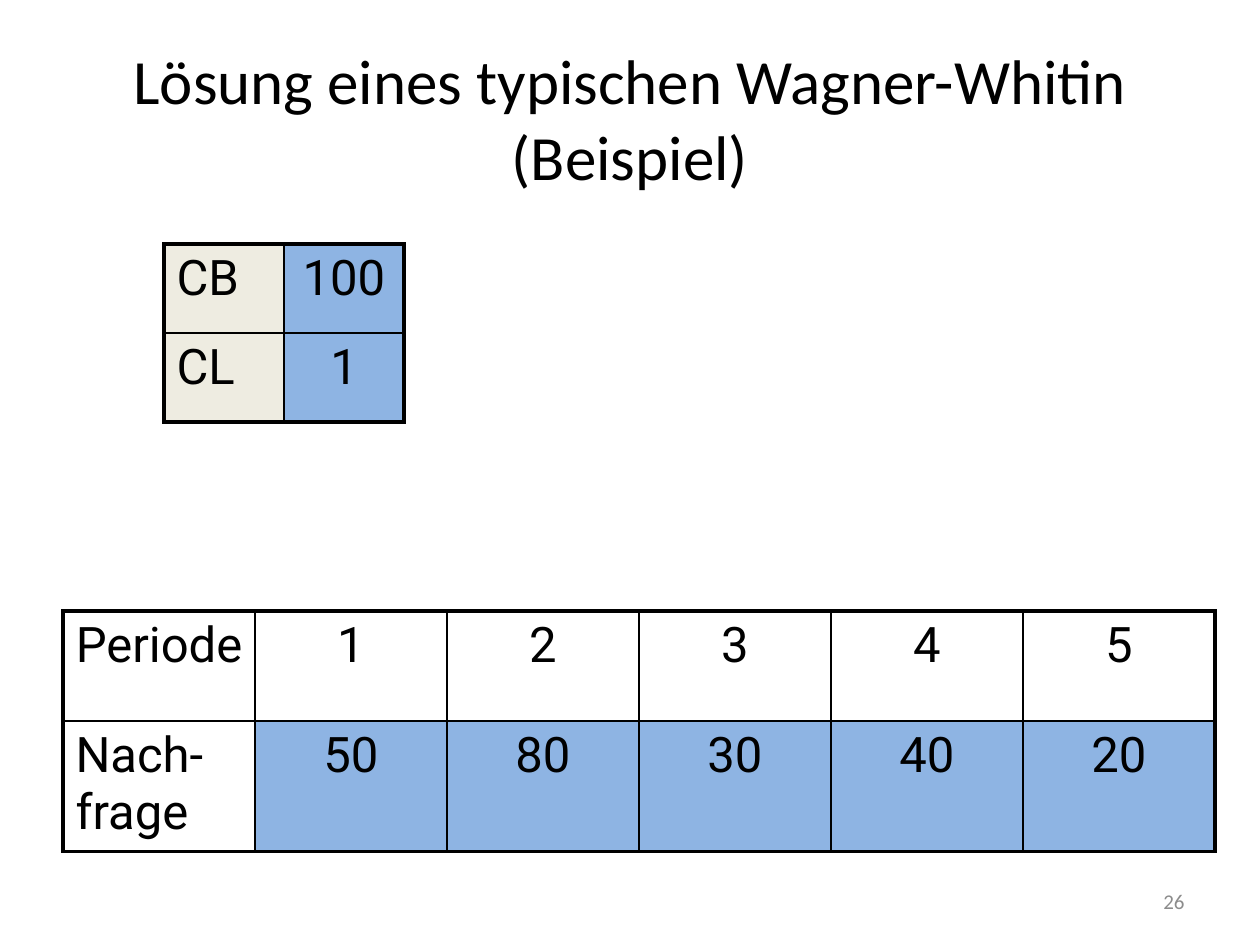
from lxml import etree
from pptx import Presentation
from pptx.dml.color import RGBColor
from pptx.enum.text import MSO_ANCHOR, PP_ALIGN
from pptx.oxml.ns import qn
from pptx.util import Pt

LEFT, CENTER, RIGHT = PP_ALIGN.LEFT, PP_ALIGN.CENTER, PP_ALIGN.RIGHT
MIDDLE = MSO_ANCHOR.MIDDLE
PX = 914400 // 126

# Content
TITLE = "Lösung eines typischen Wagner-Whitin (Beispiel)"
PAGE_NUMBER = "26"
DEMAND = [
    ["Periode", "1", "2", "3", "4", "5"],
    ["Nach-frage", "50", "80", "30", "40", "20"],
]
COSTS = [["CB", "100"], ["CL", "1"]]

# Colours and line widths
BLACK, GREY, WHITE = "000000", "8C8C8C", "FFFFFF"
BEIGE, BLUE = "EEECE1", "8EB4E3"
OUTER, INNER = Pt(2.25), Pt(1)


def rgb(value):
    return RGBColor.from_string(value)


def style(paragraph, font, size, color, align):
    paragraph.alignment = align
    for run in paragraph.runs:
        run.font.name = font
        run.font.size = Pt(size)
        run.font.color.rgb = rgb(color)


def add_label(slide, text, box, size, color, align):
    frame = slide.shapes.add_textbox(*(v * PX for v in box)).text_frame
    frame.word_wrap = True
    frame.vertical_anchor = MIDDLE
    frame.text = text
    style(frame.paragraphs[0], "Calibri", size, color, align)


def set_border(cell, side, width):
    line = etree.SubElement(cell._tc.get_or_add_tcPr(), qn(f"a:ln{side}"), w=str(width))
    fill = etree.SubElement(line, qn("a:solidFill"))
    etree.SubElement(fill, qn("a:srgbClr"), val=BLACK)


def space_before(paragraph, percent):
    spacing = etree.SubElement(paragraph._p.get_or_add_pPr(), qn("a:spcBef"))
    etree.SubElement(spacing, qn("a:spcPct"), val=str(percent * 1000))


def add_grid(slide, rows, left, top, col_width, row_heights, fills, aligns):
    """Fills and aligns hold one (first column, other columns) pair per row."""
    last_row, last_col = len(rows) - 1, len(rows[0]) - 1
    table = slide.shapes.add_table(
        len(rows), len(rows[0]), left * PX, top * PX,
        col_width * len(rows[0]) * PX, sum(row_heights) * PX).table
    table.first_row = table.horz_banding = False
    for column in table.columns:
        column.width = col_width * PX
    for r, values in enumerate(rows):
        table.rows[r].height = row_heights[r] * PX
        for c, value in enumerate(values):
            cell = table.cell(r, c)
            edges = {"L": c == 0, "R": c == last_col, "T": r == 0, "B": r == last_row}
            for side, is_outer in edges.items():
                set_border(cell, side, OUTER if is_outer else INNER)
            cell.fill.solid()
            cell.fill.fore_color.rgb = rgb(fills[r][c > 0])
            cell.text_frame.text = value
            paragraph = cell.text_frame.paragraphs[0]
            style(paragraph, "Roboto", 28, BLACK, aligns[r][c > 0])
            space_before(paragraph, 20)


def main():
    prs = Presentation()
    prs.slide_width, prs.slide_height = 1260 * PX, 945 * PX
    slide = prs.slides.add_slide(prs.slide_layouts[6])

    # Title
    add_label(slide, TITLE, (63, 38, 1134, 158), 36, BLACK, CENTER)

    # Demand per period
    add_grid(slide, DEMAND, 63, 611, 192, [110, 130],
             fills=[(WHITE, WHITE), (WHITE, BLUE)],
             aligns=[(CENTER, CENTER), (LEFT, CENTER)])

    # Cost parameters
    add_grid(slide, COSTS, 164, 244, 120, [89, 89],
             fills=[(BEIGE, BLUE)] * 2, aligns=[(LEFT, CENTER)] * 2)

    # Page number
    add_label(slide, PAGE_NUMBER, (903, 876, 294, 50), 12, GREY, RIGHT)

    prs.save("out.pptx")


if __name__ == "__main__":
    main()
